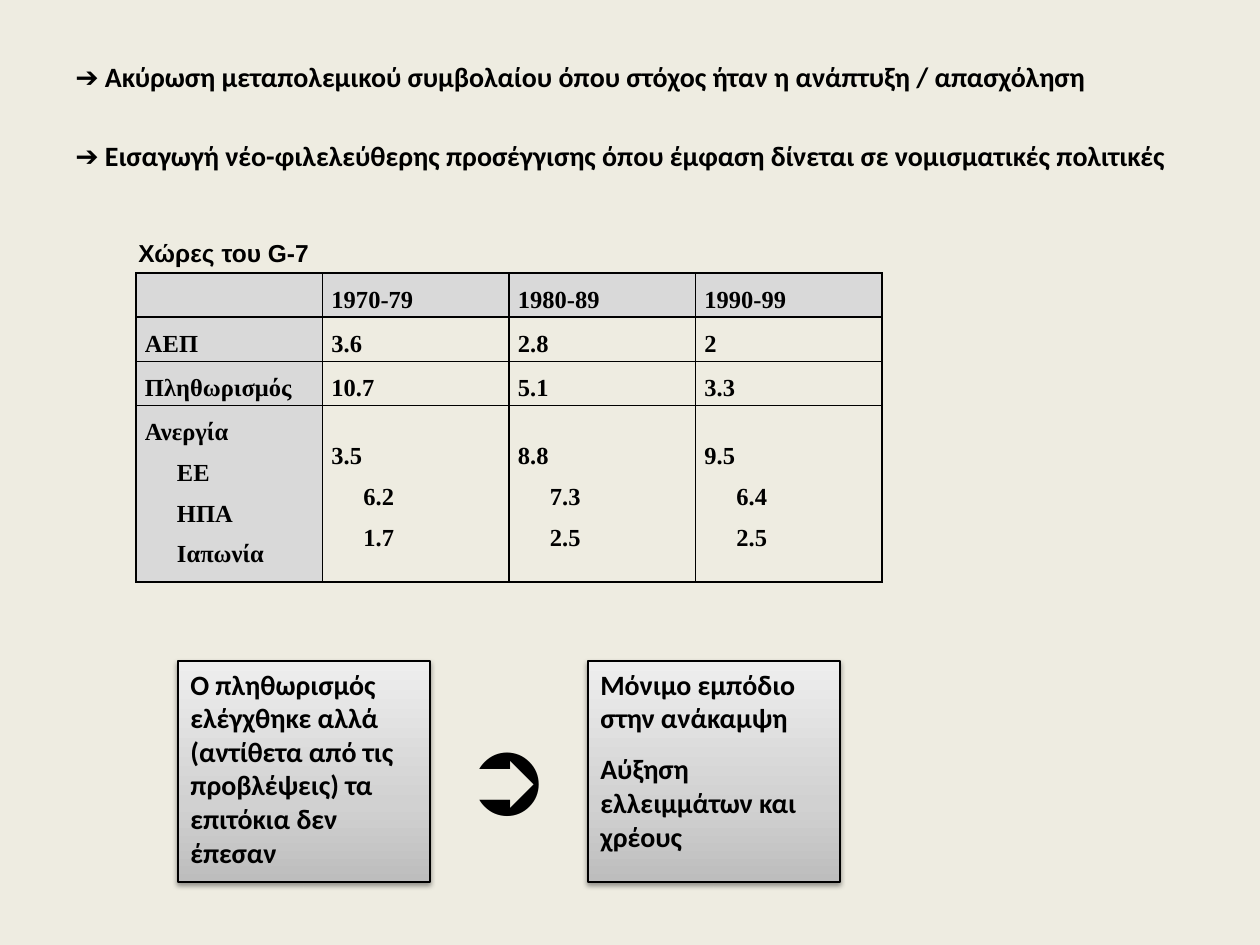
from lxml.etree import SubElement
from pptx import Presentation
from pptx.dml.color import RGBColor
from pptx.enum.shapes import MSO_SHAPE
from pptx.enum.text import MSO_ANCHOR, PP_ALIGN
from pptx.oxml.ns import qn
from pptx.util import Pt

EMU_PER_PX = 914400 / 126
BLACK = RGBColor(0x00, 0x00, 0x00)
CREAM = RGBColor(0xEE, 0xEC, 0xE1)
GREY = RGBColor(0xD9, 0xD9, 0xD9)
GRADIENT = [(0, RGBColor(0xBD, 0xBD, 0xBD)), (35, RGBColor(0xD1, 0xD1, 0xD1)),
            (100, RGBColor(0xEE, 0xEE, 0xEE))]


def px(*lengths):
    emu = [round(n * EMU_PER_PX) for n in lengths]
    return emu if len(emu) > 1 else emu[0]


def write(tf, *lines, size=16, font="Calibri", gap=0, spacing=None,
          left=0, hanging=0, first_left=None, anchor=MSO_ANCHOR.TOP):
    """Fill tf with one bold paragraph per line; gap is the points between them."""
    tf.word_wrap = True
    tf.vertical_anchor = anchor
    for i, line in enumerate(lines):
        p = tf.paragraphs[0] if i == 0 else tf.add_paragraph()
        indent = first_left if i == 0 and first_left is not None else left
        pPr = p._p.get_or_add_pPr()
        pPr.set("marL", str(px(indent)))
        pPr.set("indent", str(px(-hanging)))
        p.alignment = PP_ALIGN.LEFT
        if i and gap:
            p.space_before = Pt(gap)
        if spacing:
            p.line_spacing = spacing
        r = p.add_run()
        r.text = line
        r.font.name, r.font.size, r.font.bold = font, Pt(size), True
        r.font.color.rgb = BLACK


prs = Presentation()
prs.slide_width, prs.slide_height = px(1260, 945)
s = prs.slides.add_slide(prs.slide_layouts[6])
s.background.fill.solid()
s.background.fill.fore_color.rgb = CREAM

# Statements, table caption and arrow
write(s.shapes.add_textbox(*px(63, 53, 1134, 158)).text_frame,
      "➔ Ακύρωση μεταπολεμικού συμβολαίου όπου στόχος ήταν η ανάπτυξη / απασχόληση",
      "➔ Εισαγωγή νέο-φιλελεύθερης προσέγγισης όπου έμφαση δίνεται σε νομισματικές πολιτικές",
      gap=26, left=48, hanging=48)
write(s.shapes.add_textbox(*px(126, 231, 231, 43)).text_frame, "Χώρες του G-7",
      size=14, font="Arial", anchor=MSO_ANCHOR.MIDDLE)
write(s.shapes.add_textbox(*px(451, 703, 116, 140)).text_frame, "➲", size=60)

# Table of the G-7 countries
ROWS = [
    [[], ["1970-79"], ["1980-89"], ["1990-99"]],
    [["ΑΕΠ"], ["3.6"], ["2.8"], ["2"]],
    [["Πληθωρισμός"], ["10.7"], ["5.1"], ["3.3"]],
    [["Ανεργία", "ΕΕ", "ΗΠΑ", "Ιαπωνία"], ["3.5", "6.2", "1.7"],
     ["8.8", "7.3", "2.5"], ["9.5", "6.4", "2.5"]],
]
ROW_HEIGHTS = [44, 44, 44, 176]
table = s.shapes.add_table(4, 4, *px(136, 273, 746, sum(ROW_HEIGHTS))).table
table.first_row = table.horz_banding = False
for row, height in zip(table.rows, ROW_HEIGHTS):
    row.height = px(height)
for i, row in enumerate(ROWS):
    for j, lines in enumerate(row):
        cell = table.cell(i, j)
        cell.margin_left = cell.margin_right = px(9)
        cell.margin_top = px(24 if i == 3 and j else 0)
        cell.margin_bottom = 0
        write(cell.text_frame, *lines, size=14, font="Times New Roman",
              spacing=1.5, left=32, first_left=0)
        tcPr = cell._tc.get_or_add_tcPr()
        for side in ("a:lnL", "a:lnR", "a:lnT", "a:lnB"):
            ln = SubElement(tcPr, qn(side), w=str(Pt(1)))
            SubElement(SubElement(ln, qn("a:solidFill")), qn("a:srgbClr"), val=str(BLACK))
        if i == 0 or j == 0:
            cell.fill.solid()
            cell.fill.fore_color.rgb = GREY
        else:
            cell.fill.background()

# Cause and effect boxes
BOXES = [
    (178, ["Ο πληθωρισμός ελέγχθηκε αλλά (αντίθετα από τις προβλέψεις) τα επιτόκια δεν έπεσαν"]),
    (588, ["Μόνιμο εμπόδιο στην ανάκαμψη", "Αύξηση ελλειμμάτων και χρέους"]),
]
for x, lines in BOXES:
    sp = s.shapes.add_shape(MSO_SHAPE.RECTANGLE, *px(x, 661, 252, 221))
    sp.line.color.rgb = BLACK
    sp.line.width = Pt(0.75)
    sp.fill.gradient()
    sp.fill.gradient_angle = 90
    stops = sp._element.spPr.find(".//" + qn("a:gsLst"))
    for stop in list(stops):
        stops.remove(stop)
    for percent, color in GRADIENT:
        stop = SubElement(stops, qn("a:gs"), pos=str(percent * 1000))
        SubElement(stop, qn("a:srgbClr"), val=str(color))
    sp.shadow.inherit = False
    shadow = SubElement(sp._element.spPr.find(qn("a:effectLst")), qn("a:outerShdw"),
                        blurRad=str(Pt(3.1)), dist=str(Pt(1.6)), dir="5400000", rotWithShape="0")
    color = SubElement(shadow, qn("a:srgbClr"), val=str(BLACK))
    SubElement(color, qn("a:alpha"), val="38000")
    write(sp.text_frame, *lines, gap=10)

prs.save("out.pptx")
